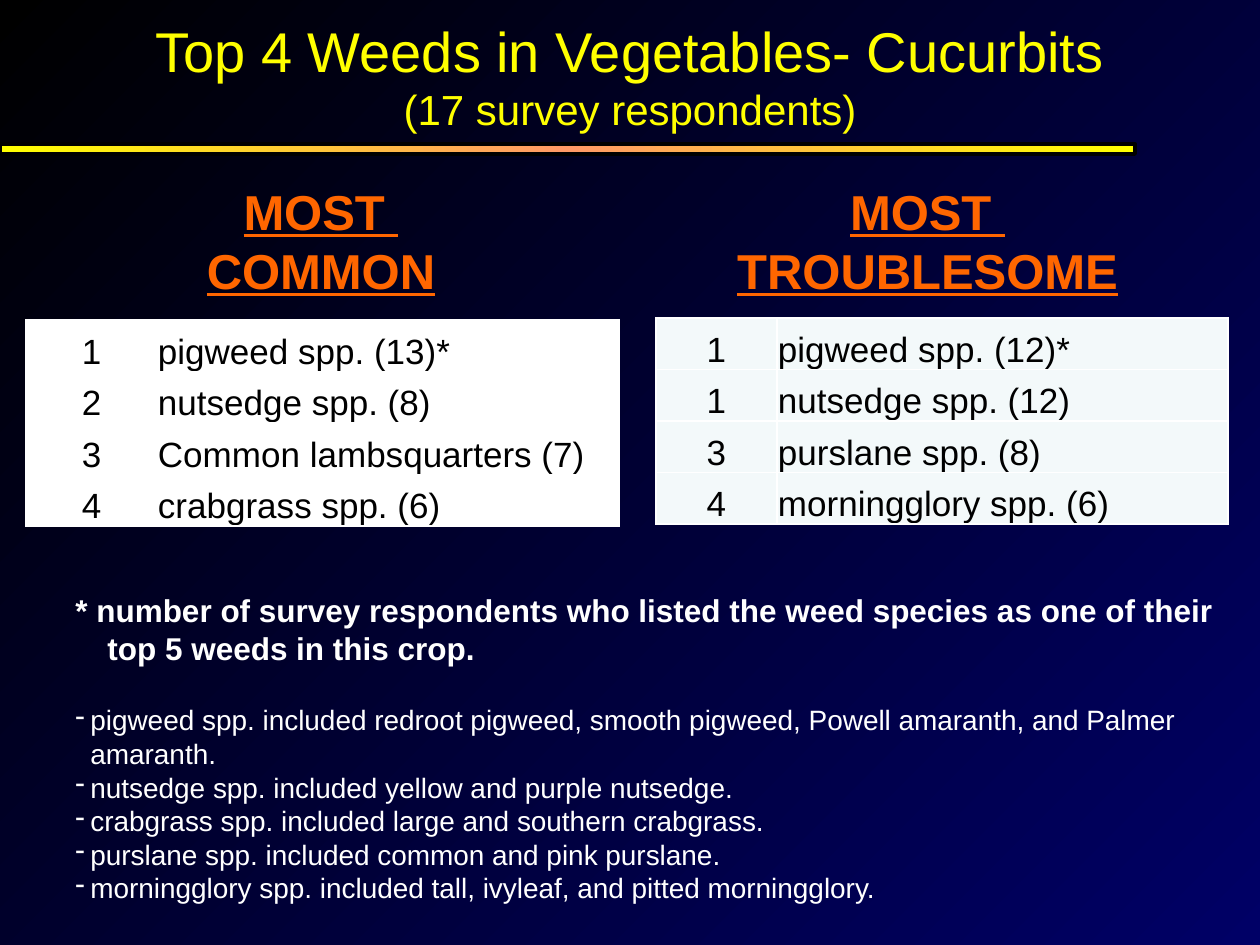
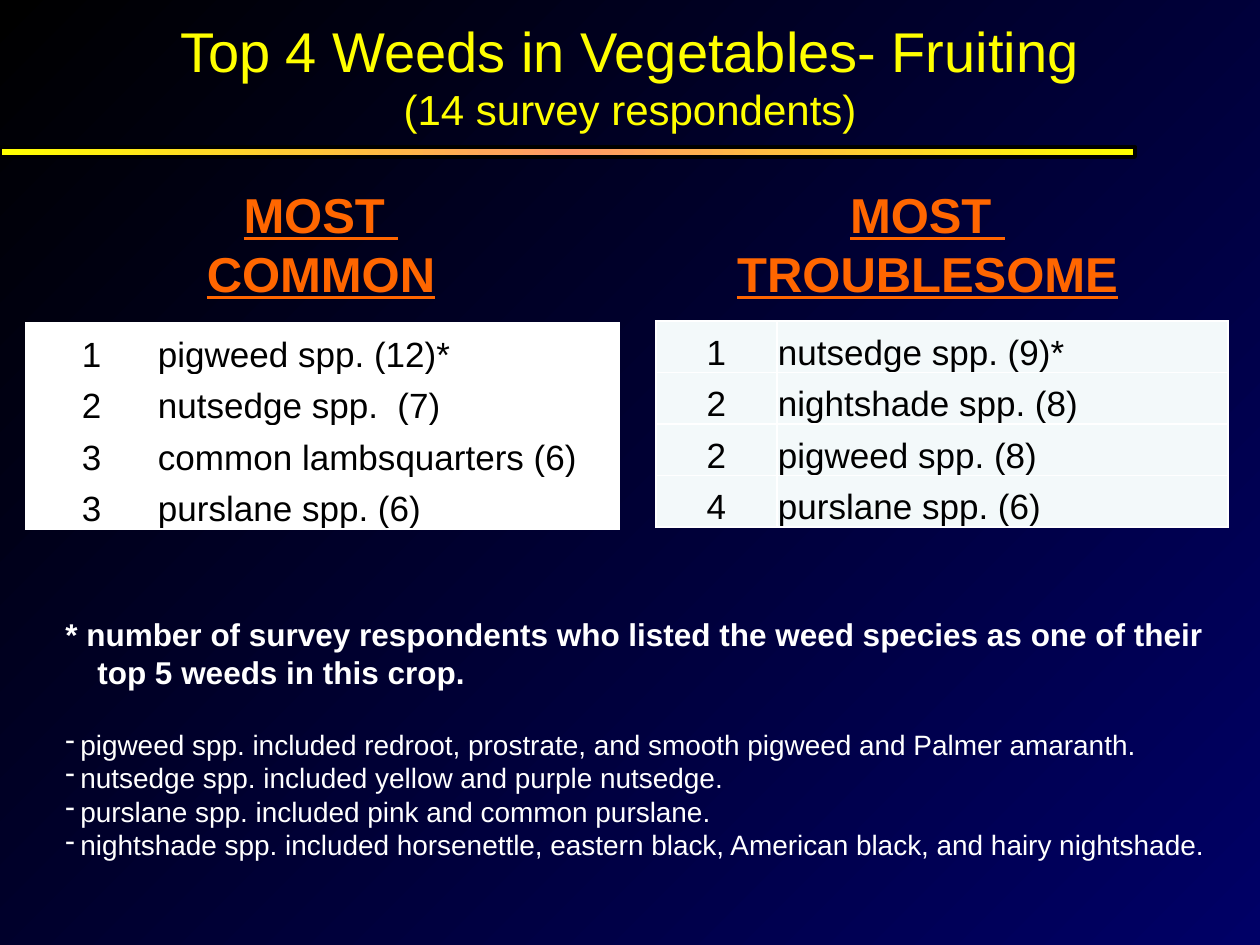
from lxml.etree import SubElement
from pptx import Presentation
from pptx.dml.color import RGBColor
from pptx.enum.shapes import MSO_SHAPE
from pptx.enum.text import MSO_ANCHOR, MSO_AUTO_SIZE, PP_ALIGN
from pptx.oxml.ns import qn
from pptx.util import Pt

# Content
FOOTNOTE = ("* number of survey respondents who listed the weed species "
            "as one of their top 5 weeds in this crop.")
CROPS = [
    {
        "title": "Top 4 Weeds in Vegetables- Cucurbits",
        "respondents": "(17 survey respondents)",
        "common": [("1", "pigweed spp. (13)*"), ("2", "nutsedge spp. (8)"),
                   ("3", "Common lambsquarters (7)"), ("4", "crabgrass spp. (6)")],
        "troublesome": [("1", "pigweed spp. (12)*"), ("1", "nutsedge spp. (12)"),
                        ("3", "purslane spp. (8)"), ("4", "morningglory spp. (6)")],
        "species": [
            "pigweed spp. included redroot pigweed, smooth pigweed, Powell amaranth, "
            "and Palmer amaranth.",
            "nutsedge spp. included yellow and purple nutsedge.",
            "crabgrass spp. included large and southern crabgrass.",
            "purslane spp. included common and pink purslane.",
            "morningglory spp. included tall, ivyleaf, and pitted morningglory.",
        ],
        "shift": 0,
        "notes_box": (63, 585, 1166, 331),
    },
    {
        "title": "Top 4 Weeds in Vegetables- Fruiting",
        "respondents": "(14 survey respondents)",
        "common": [("1", "pigweed spp. (12)*"), ("2", "nutsedge spp.  (7)"),
                   ("3", "common lambsquarters (6)"), ("3", "purslane spp. (6)")],
        "troublesome": [("1", "nutsedge spp. (9)*"), ("2", "nightshade spp. (8)"),
                        ("2", "pigweed spp. (8)"), ("4", "purslane spp. (6)")],
        "species": [
            "pigweed spp. included redroot, prostrate, and smooth pigweed "
            "and Palmer amaranth.",
            "nutsedge spp. included yellow and purple nutsedge.",
            "purslane spp. included pink and common purslane.",
            "nightshade spp. included horsenettle, eastern black, American black, "
            "and hairy nightshade.",
        ],
        "shift": 3,
        "notes_box": (53, 609, 1166, 297),
    },
]

# Shared look
BLACK = RGBColor(0x00, 0x00, 0x00)
WHITE = RGBColor(0xFF, 0xFF, 0xFF)
NAVY = RGBColor(0x00, 0x00, 0x66)
YELLOW = RGBColor(0xFF, 0xFF, 0x00)
PEACH = RGBColor(0xFF, 0x99, 0x66)
ORANGE = RGBColor(0xFF, 0x66, 0x00)
ICE = RGBColor(0xF3, 0xF9, 0xFA)

TITLE = {"size": Pt(32), "color": YELLOW}
SUBTITLE = {"size": Pt(24), "color": YELLOW}
HEADING = {"size": Pt(28), "color": ORANGE, "bold": True, "underline": True}
ENTRY = {"size": Pt(20), "color": BLACK}
NOTE = {"size": Pt(18), "color": WHITE, "bold": True}
SPECIES = {"size": Pt(16), "color": WHITE, "bold": False}

# Ranking columns: heading and table places in px
RANKINGS = [
    {"key": "common", "heading": ("MOST ", "COMMON"), "wrap": True,
     "heading_box": (170, 175, 302, 131), "corner": (26, 320),
     "columns": (131, 462), "fill": WHITE},
    {"key": "troublesome", "heading": ("MOST ", "TROUBLESOME"), "wrap": False,
     "heading_box": (722, 175, 411, 131), "corner": (656, 318),
     "columns": (121, 451), "fill": ICE},
]
TABLE_HEIGHT = 206
CELL_MARGINS = {"margin_left": 1, "margin_right": 1, "margin_top": 1, "margin_bottom": 0}


def px(length):
    return round(length * 914400 / 126)


def place(box, shift=0):
    left, top, width, height = box
    return [px(v) for v in (left, top + shift, width, height)]


def write(paragraph, text, style, align=PP_ALIGN.LEFT):
    run = paragraph.add_run()
    run.text = text
    paragraph.alignment = align
    run.font.name = "Arial"
    for name, value in style.items():
        if name == "color":
            run.font.color.rgb = value
        else:
            setattr(run.font, name, value)


def add_lines(slide, box, lines, align=PP_ALIGN.LEFT, wrap=True, grow=True):
    """Add a text box with one paragraph per (text, style) pair."""
    frame = slide.shapes.add_textbox(*box).text_frame
    frame.word_wrap = wrap
    frame.auto_size = MSO_AUTO_SIZE.SHAPE_TO_FIT_TEXT if grow else MSO_AUTO_SIZE.NONE
    for i, (text, style) in enumerate(lines):
        paragraph = frame.add_paragraph() if i else frame.paragraphs[0]
        write(paragraph, text, style, align)
    return frame


def paint_gradient(fill, root, colors, angle):
    """Spread the colours evenly along a linear gradient."""
    fill.gradient()
    fill.gradient_angle = angle
    stops = root.find(".//" + qn("a:gsLst"))
    stops.clear()
    for i, color in enumerate(colors):
        stop = SubElement(stops, qn("a:gs"), pos=str(100000 * i // (len(colors) - 1)))
        SubElement(stop, qn("a:srgbClr"), val=str(color))


def add_rule(slide, shift):
    rule = slide.shapes.add_shape(MSO_SHAPE.RECTANGLE, *place((0, 144, 1135, 10), shift))
    rule.shadow.inherit = False
    paint_gradient(rule.fill, rule._element, (YELLOW, PEACH, YELLOW), 0)
    rule.line.color.rgb = BLACK
    rule.line.width = Pt(2.25)


def add_borders(cell):
    properties = cell._tc.get_or_add_tcPr()
    for i, side in enumerate(("a:lnL", "a:lnR", "a:lnT", "a:lnB")):
        line = SubElement(properties, qn(side), w=str(Pt(1)))
        SubElement(SubElement(line, qn("a:solidFill")), qn("a:srgbClr"), val=str(WHITE))
        properties.insert(i, line)


def add_ranking(slide, ranking, entries, shift):
    add_lines(slide, place(ranking["heading_box"], shift),
              [(word, HEADING) for word in ranking["heading"]],
              PP_ALIGN.CENTER, ranking["wrap"])
    box = (*ranking["corner"], sum(ranking["columns"]), TABLE_HEIGHT)
    table = slide.shapes.add_table(len(entries), 2, *place(box, shift)).table
    table.first_row = table.horz_banding = False
    for column, width in zip(table.columns, ranking["columns"]):
        column.width = px(width)
    for r, entry in enumerate(entries):
        for c, (text, align) in enumerate(zip(entry, (PP_ALIGN.CENTER, PP_ALIGN.LEFT))):
            cell = table.cell(r, c)
            cell.vertical_anchor = MSO_ANCHOR.BOTTOM
            for name, value in CELL_MARGINS.items():
                setattr(cell, name, px(value))
            cell.fill.solid()
            cell.fill.fore_color.rgb = ranking["fill"]
            add_borders(cell)
            write(cell.text_frame.paragraphs[0], text, ENTRY, align)


def add_notes(slide, crop):
    lines = [(FOOTNOTE, NOTE)] + [(text, SPECIES) for text in crop["species"]]
    frame = add_lines(slide, place(crop["notes_box"]), lines)
    for i, paragraph in enumerate(frame.paragraphs):
        indent = px(15 if i else 32)
        properties = paragraph._p.get_or_add_pPr()
        properties.set("marL", str(indent))
        properties.set("indent", str(-indent))
        if i:
            SubElement(properties, qn("a:buChar"), char="-")
    frame.paragraphs[0].space_after = Pt(20.7)


def add_crop(deck, crop):
    slide = deck.slides.add_slide(deck.slide_layouts[6])
    paint_gradient(slide.background.fill, slide._element, (BLACK, NAVY), 315)
    add_rule(slide, crop["shift"])
    for ranking in RANKINGS:
        add_ranking(slide, ranking, crop[ranking["key"]], crop["shift"])
    title = add_lines(slide, place((42, 0, 1176, 151)),
                      [(crop["title"], TITLE), (crop["respondents"], SUBTITLE)],
                      PP_ALIGN.CENTER, grow=False)
    title.vertical_anchor = MSO_ANCHOR.MIDDLE
    add_notes(slide, crop)


def main():
    deck = Presentation()
    deck.slide_width, deck.slide_height = px(1260), px(945)
    for crop in CROPS:
        add_crop(deck, crop)
    deck.save("out.pptx")


if __name__ == "__main__":
    main()
